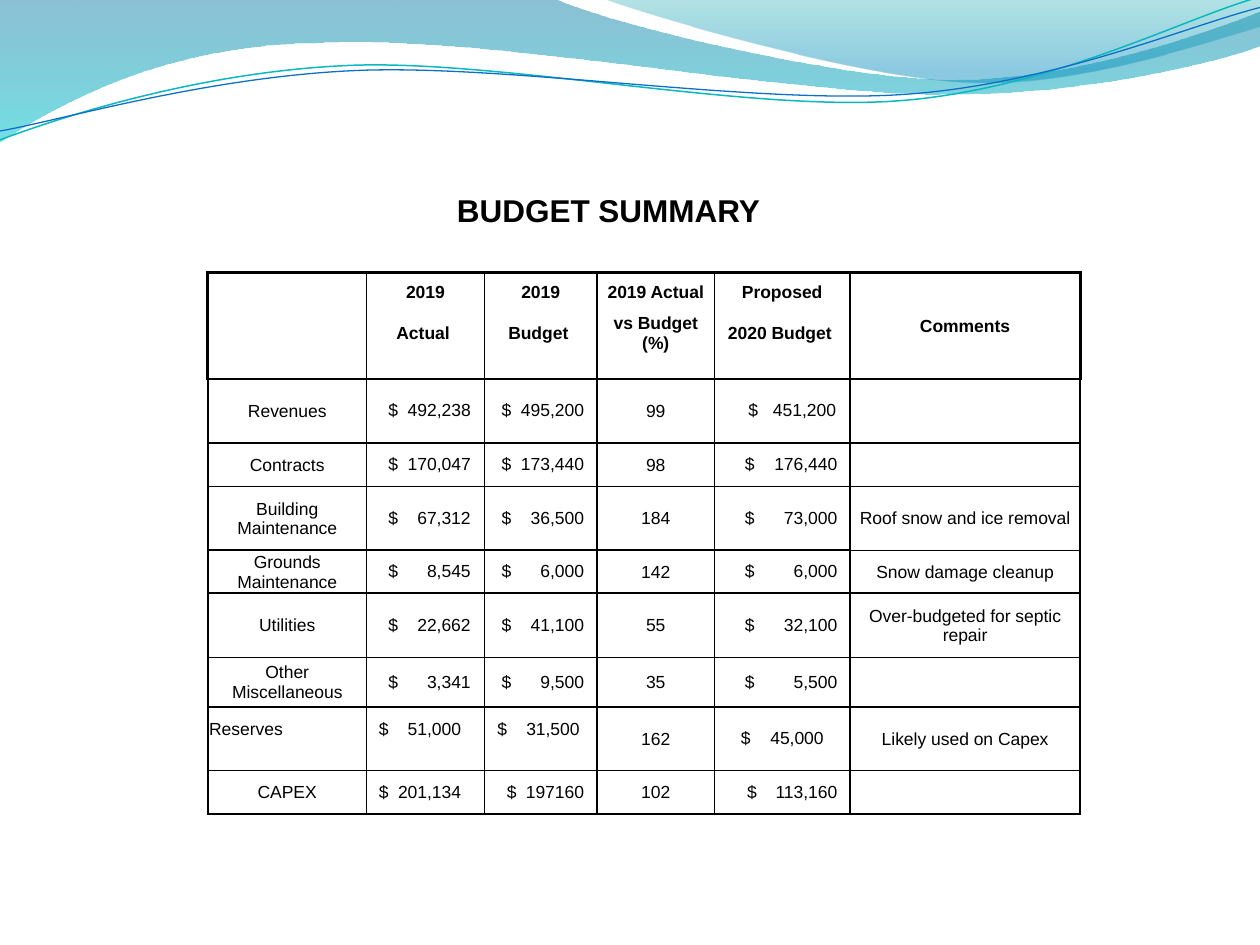
from dataclasses import dataclass
from math import cos, radians, sin

from lxml import etree
from pptx import Presentation
from pptx.dml.color import RGBColor
from pptx.enum.text import MSO_ANCHOR, MSO_AUTO_SIZE, PP_ALIGN
from pptx.oxml.ns import qn
from pptx.util import Pt

CENTER, LEFT = PP_ALIGN.CENTER, PP_ALIGN.LEFT
MIDDLE, TOP = MSO_ANCHOR.MIDDLE, MSO_ANCHOR.TOP
FIT_TEXT = MSO_AUTO_SIZE.SHAPE_TO_FIT_TEXT


@dataclass(frozen=True)
class Theme:
    font: str = "Arial"
    ink: str = "000000"
    title_size: float = 18
    table_size: float = 10
    deep_wave: tuple = ((0, "0074A1", 45), (1, "00C6CF", 55))
    pale_wave: tuple = ((0, "00A1A9", 30), (0.8, "008BBF", 45))
    teal_line: str = "0AB8BF"
    blue_line: str = "0F6FC6"


THEME = Theme()
NO_STYLE = "{2D5ABB26-0587-4C30-8999-92F81FD0307C}"
CURVE_TILT = 2.7

DEEP_WAVE = [(0, -0.7), (317, -0.7), (343, 12.2, 478, 45.4, 546, 45.4),
             (614, 45.4, 690, 18.7, 720, 6.5), (720.7, 25.9),
             (708, 31.7, 626, 54.7, 537, 54), (448, 54, 275, 20.2, 185, 24.5),
             (92.9, 25.2, 33.1, 59.8, -0.7, 81.4), (0, -0.7)]
PALE_WAVE = [(345, -0.7), (366.5, 7.9, 491, 44.6, 553.7, 46.8),
             (616.3, 49.7, 691.9, 23, 720, 15.1), (720, 0), (345, -0.7)]
TEAL_CURVE = [(0, 79.9), (34.6, 67, 113.8, 41, 199.4, 37.4),
              (284.4, 33.8, 427, 64.1, 513.4, 57.6),
              (599.8, 51.1, 675.4, 10.8, 718.6, -1.4)]
BLUE_CURVE = [(0, 74.9), (33.8, 69.1, 118.1, 43.9, 203.8, 40.3),
              (290.2, 36.7, 429.8, 59.8, 516.2, 54),
              (601.9, 48.2, 677.5, 15.1, 720, 4.3)]

COLUMN_WIDTHS = [90.75, 67.25, 64.5, 67, 77.5, 131.5]
ROW_HEIGHTS = [22.5, 24.5, 14, 36.75, 24.75, 36.5, 24.5, 36.75, 28.25, 36.5, 24.75]
HEADER_ROWS = 3
CONTRACTS, BUILDING, RESERVES = 4, 5, 9
COMMENTS = 5
BUDGET = [
    ["", "2019", "2019", "2019 Actual", "Proposed", "Comments"],
    ["", "Actual", "Budget", "vs Budget (%)", "2020 Budget", ""],
    [""] * 6,
    ["Revenues", "$\t492,238", "$\t495,200", "99", "$\t451,200", ""],
    ["Contracts", "$\t170,047", "$\t173,440", "98", "$\t176,440", ""],
    ["Building Maintenance", "$\t67,312", "$\t36,500", "184", "$\t73,000",
     "Roof snow and ice removal"],
    ["Grounds Maintenance", "$\t8,545", "$\t6,000", "142", "$\t6,000",
     "Snow damage cleanup"],
    ["Utilities", "$\t22,662", "$\t41,100", "55", "$\t32,100",
     "Over-budgeted for septic repair"],
    ["Other Miscellaneous", "$\t3,341", "$\t9,500", "35", "$\t5,500", ""],
    ["Reserves", "$\t51,000", "$\t31,500", "162", "$\t45,000",
     "Likely used on Capex"],
    ["CAPEX", "$\t201,134", "$\t197160", "102", "$\t113,160", ""],
]
AMOUNT_SPANS = {1: (12.5, 47), 2: (10, 47), 4: (17.5, 52.75)}
SPECIAL_SPANS = {(3, 4): (19.5, 50), (9, 1): (7, 47), (9, 2): (7.5, 47),
                 (9, 4): (15.25, 47.25), (10, 1): (7, 47), (10, 2): (13, 44),
                 (10, 4): (18.75, 51.5)}


def set_all(target, values):
    for name, value in values.items():
        setattr(target, name, value)


def add_outline(slide, segments, close, tilt=0):
    points = [pair for segment in segments for pair in zip(segment[::2], segment[1::2])]
    middle_x, middle_y = 359.5, 42
    c, s = cos(radians(tilt)), sin(radians(tilt))
    corners = [(Pt(middle_x + (x - middle_x) * c - (y - middle_y) * s),
                Pt(middle_y + (x - middle_x) * s + (y - middle_y) * c))
               for x, y in points]
    builder = slide.shapes.build_freeform(*corners[0])
    builder.add_line_segments(corners[1:], close=close)
    outline = builder.convert_to_shape()
    outline.shadow.inherit = False
    outline.rotation = -tilt
    steps = outline._element.spPr.iter(qn("a:lnTo"))
    bend_steps(list(steps), segments[1:])
    return outline


def bend_steps(steps, segments):
    remaining = iter(steps)
    for segment in segments:
        first = next(remaining)
        if len(segment) == 6:
            first.tag = qn("a:cubicBezTo")
            for _ in range(2):
                control = next(remaining)
                first.append(control[0])
                control.getparent().remove(control)


def add_wave(slide, segments, stops):
    wave = add_outline(slide, segments, True)
    wave.line.fill.background()
    wave.fill.gradient()
    wave.fill.gradient_angle = 270
    for stop, (position, color, _) in zip(wave.fill.gradient_stops, stops):
        stop.position = position
        stop.color.rgb = RGBColor.from_string(color)
    for tint, (_, _, opacity) in zip(wave._element.spPr.iter(qn("a:srgbClr")), stops):
        etree.SubElement(tint, qn("a:alpha"), val=str(opacity * 1000))


def add_curve(slide, segments, color, width):
    curve = add_outline(slide, segments, False, CURVE_TILT)
    curve.fill.background()
    curve.line.color.rgb = RGBColor.from_string(color)
    curve.line.width = Pt(width)


def write(paragraph, text, size, bold):
    run = paragraph.add_run()
    run.text = text
    set_all(run.font, {"name": THEME.font, "size": Pt(size), "bold": bold})
    run.font.color.rgb = RGBColor.from_string(THEME.ink)


def add_title(slide, text):
    title = slide.shapes.add_textbox(Pt(254), Pt(105.5), Pt(194.5), Pt(29))
    set_all(title.text_frame, {"word_wrap": False, "auto_size": FIT_TEXT})
    write(title.text_frame.paragraphs[0], text, THEME.title_size, True)


def border_widths(row, column):
    widths = {"L": 1, "R": 1, "T": 1, "B": 1}
    if row < HEADER_ROWS:
        merged = column in (0, COMMENTS)
        widths["T"] = 2 if row == 0 else 0
        widths["B"] = 1 if merged or row == HEADER_ROWS - 1 else 0
        widths["L"] = 2 if column == 0 else 1
        widths["R"] = 2 if column == COMMENTS else 1
    if row == CONTRACTS or (row, column) == (BUILDING, COMMENTS):
        widths["B"] = 0.5
    if row == BUILDING or (row, column) == (BUILDING + 1, COMMENTS):
        widths["T"] = 0.5
    return widths


def draw_borders(cell, widths):
    properties = cell._tc.get_or_add_tcPr()
    for side, width in widths.items():
        edge = etree.SubElement(properties, qn(f"a:ln{side}"), w=str(Pt(width)))
        if width:
            fill = etree.SubElement(edge, qn("a:solidFill"))
            etree.SubElement(fill, qn("a:srgbClr"), val=THEME.ink)
        else:
            etree.SubElement(edge, qn("a:noFill"))


def fill_cell(cell, row, column, text):
    draw_borders(cell, border_widths(row, column))
    cell.fill.background()
    layout = {"vertical_anchor": MIDDLE, "margin_left": Pt(0.75),
              "margin_right": Pt(0.75), "margin_top": Pt(0.75), "margin_bottom": 0}
    paragraph = cell.text_frame.paragraphs[0]
    paragraph.alignment = CENTER
    if row == 1 and column in AMOUNT_SPANS:
        layout["margin_right"] = Pt(3.5)
    if "\t" in text:
        inset, span = SPECIAL_SPANS.get((row, column), AMOUNT_SPANS[column])
        layout.update(margin_left=Pt(inset), margin_right=0, margin_top=0)
        paragraph.alignment = LEFT
        stops = etree.SubElement(paragraph._p.get_or_add_pPr(), qn("a:tabLst"))
        etree.SubElement(stops, qn("a:tab"), pos=str(Pt(span)), algn="r")
    if row == RESERVES and column < 3:
        layout.update(vertical_anchor=TOP, margin_top=Pt(7.25))
        paragraph.alignment = LEFT
    set_all(cell, layout)
    if text:
        write(paragraph, text, THEME.table_size, row < HEADER_ROWS)
    else:
        etree.SubElement(paragraph._p, qn("a:endParaRPr"),
                         sz=str(int(THEME.table_size * 100)))


def add_budget(slide):
    frame = slide.shapes.add_table(len(BUDGET), len(COLUMN_WIDTHS), Pt(118.75), Pt(155.5),
                                   Pt(sum(COLUMN_WIDTHS)), Pt(sum(ROW_HEIGHTS)))
    table = frame.table
    set_all(table, {"first_row": False, "horz_banding": False})
    table._tbl.tblPr.find(qn("a:tableStyleId")).text = NO_STYLE
    for column, width in zip(table.columns, COLUMN_WIDTHS):
        column.width = Pt(width)
    for row, height in zip(table.rows, ROW_HEIGHTS):
        row.height = Pt(height)
    for column in (0, COMMENTS):
        table.cell(0, column).merge(table.cell(HEADER_ROWS - 1, column))
    for row, texts in enumerate(BUDGET):
        for column, text in enumerate(texts):
            fill_cell(table.cell(row, column), row, column, text)


def main():
    deck = Presentation()
    set_all(deck, {"slide_width": Pt(720), "slide_height": Pt(540)})
    slide = deck.slides.add_slide(deck.slide_layouts[6])
    add_wave(slide, DEEP_WAVE, THEME.deep_wave)
    add_wave(slide, PALE_WAVE, THEME.pale_wave)
    add_curve(slide, TEAL_CURVE, THEME.teal_line, 0.85)
    add_curve(slide, BLUE_CURVE, THEME.blue_line, 0.75)
    add_budget(slide)
    add_title(slide, "BUDGET SUMMARY")
    deck.save("out.pptx")


if __name__ == "__main__":
    main()
